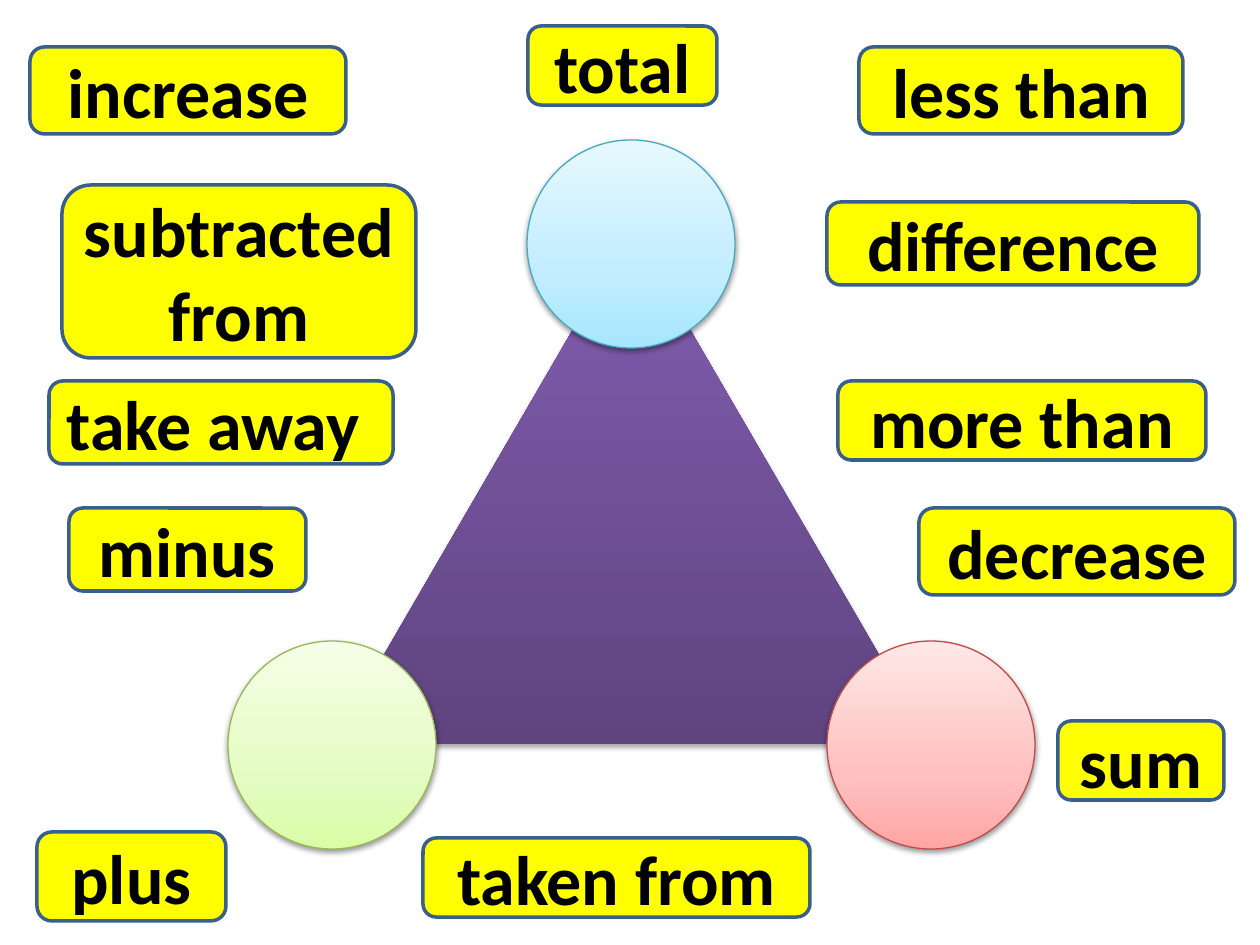
from lxml.etree import SubElement as Sub
from pptx import Presentation
from pptx.dml.color import RGBColor as Rgb
from pptx.enum.shapes import MSO_SHAPE as Kind
from pptx.enum.text import MSO_ANCHOR as Anchor, PP_ALIGN as Align
from pptx.oxml.ns import qn
from pptx.util import Pt

PX = 914400 / 126
WIDTH, HEIGHT = 1260, 945

YELLOW = Rgb(0xFF, 0xFF, 0x00)
NAVY = Rgb(0x3A, 0x5F, 0x8C)
BLACK = Rgb(0x00, 0x00, 0x00)
TEAL = Rgb(0x46, 0xAA, 0xC5)
GREEN = Rgb(0x98, 0xB9, 0x55)
RED = Rgb(0xBF, 0x4C, 0x48)


def stops(places, *codes):
    return [(at, Rgb.from_string(code)) for at, code in zip(places, codes)]


PURPLES = stops((0, 80, 100), "5F4480", "7B58A6", "7C57A8")
TINTS = (0, 35, 100)
BLUES = stops(TINTS, "A7E6FF", "C1EDFF", "E7F8FF")
LIMES = stops(TINTS, "DAFDA7", "E4FCC2", "F5FFE7")
PINKS = stops(TINTS, "FFA6A5", "FFC0BF", "FFE7E7")

FONT = {"name": "Calibri", "size": Pt(40), "bold": True}
FRAME = {"word_wrap": True, "vertical_anchor": Anchor.MIDDLE}

LABELS = [
    ("sum", (1058, 721, 166, 79)),
    ("total", (528, 26, 189, 79)),
    ("plus", (37, 832, 189, 89)),
    ("minus", (69, 508, 237, 83)),
    ("less than", (859, 47, 324, 87)),
    ("more than", (838, 381, 368, 79)),
    ("take away ", (49, 381, 344, 83)),
    ("taken from", (423, 838, 387, 79)),
    ("difference", (827, 202, 372, 83)),
    ("subtracted from", (62, 185, 354, 173)),
    ("increase", (30, 47, 316, 87)),
    ("decrease", (919, 508, 316, 87)),
]


def emu(px):
    return round(px * PX)


def style(item, values):
    for name, value in values.items():
        setattr(item, name, value)


def place(shapes, kind, box):
    shape = shapes.add_shape(kind, *map(emu, box))
    shape.shadow.inherit = False
    return shape


def edge(shape, color, width):
    shape.line.color.rgb = color
    shape.line.width = Pt(width)


def shade(shape, colors):
    """Fill with a gradient that runs from bottom to top."""
    shape.fill.gradient()
    shape.fill.gradient_angle = 90
    ramp = shape._element.spPr.find(".//" + qn("a:gsLst"))
    for old in list(ramp):
        ramp.remove(old)
    for at, color in colors:
        stop = Sub(ramp, qn("a:gs"), pos=str(at * 1000))
        Sub(stop, qn("a:srgbClr"), val=str(color))


def drop(shape, alpha, dist):
    """Cast a soft black shadow straight down."""
    effects = shape._element.spPr.find(qn("a:effectLst"))
    cast = Sub(effects, qn("a:outerShdw"), blurRad=str(Pt(3.1)),
               dist=str(Pt(dist)), dir="5400000", rotWithShape="0")
    color = Sub(cast, qn("a:srgbClr"), val=str(BLACK))
    Sub(color, qn("a:alpha"), val=str(alpha * 1000))


def diagram(slide, box):
    """Triangle with a circle on each corner."""
    left, top, width, height = box
    size = 208
    group = slide.shapes.add_group_shape()

    base = width - size
    peak = place(group.shapes, Kind.ISOSCELES_TRIANGLE,
                 (left + size // 2, top + 89, base, 515))
    shade(peak, PURPLES)
    peak.line.fill.background()
    drop(peak, 35, 1.8)

    low = height - size
    for x, y, colors, rim in ((base // 2, 0, BLUES, TEAL),
                              (0, low, LIMES, GREEN),
                              (base, low, PINKS, RED)):
        disc = place(group.shapes, Kind.OVAL, (left + x, top + y, size, size))
        shade(disc, colors)
        edge(disc, rim, 0.75)
        drop(disc, 38, 1.6)


def label(slide, text, box):
    card = place(slide.shapes, Kind.ROUNDED_RECTANGLE, box)
    card.fill.solid()
    card.fill.fore_color.rgb = YELLOW
    edge(card, NAVY, 2)
    frame = card.text_frame
    style(frame, FRAME)
    para = frame.paragraphs[0]
    para.alignment = Align.CENTER
    run = para.add_run()
    run.text = text
    style(run.font, FONT)
    run.font.color.rgb = BLACK


def main():
    deck = Presentation()
    deck.slide_width, deck.slide_height = emu(WIDTH), emu(HEIGHT)
    slide = deck.slides.add_slide(deck.slide_layouts[6])
    diagram(slide, (228, 140, 807, 709))
    for text, box in LABELS:
        label(slide, text, box)
    deck.save("out.pptx")


if __name__ == "__main__":
    main()
